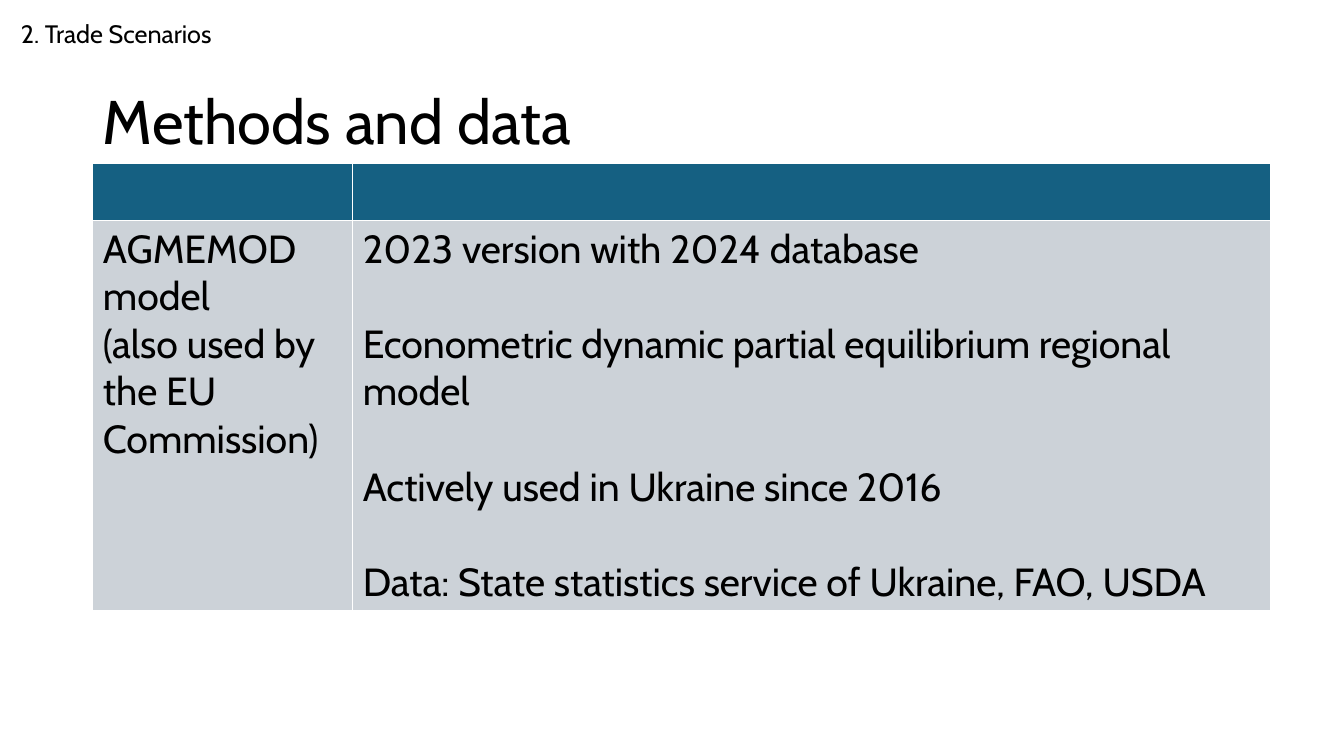
from dataclasses import dataclass

from lxml.etree import SubElement
from pptx import Presentation
from pptx.dml.color import RGBColor
from pptx.enum.text import MSO_ANCHOR
from pptx.oxml.ns import qn
from pptx.slide import Slide
from pptx.table import _Cell
from pptx.text.text import TextFrame
from pptx.util import Cm, Pt

FONT = "Cabin"
HEX = {"text": "000000", "head": "156082", "body": "CCD2D8", "line": "FFFFFF"}


@dataclass
class Label:
    text: str
    box: tuple[float, float, float, float]
    size: int
    anchor: MSO_ANCHOR = MSO_ANCHOR.TOP
    pitch: float = 1.0


@dataclass
class Entry:
    lines: list[str]
    gap: int = 0


LABELS = [
    Label("Methods and data", (2.34, 2.64, 29.18, 1.47), 44, MSO_ANCHOR.BOTTOM, 0.9),
    Label("2. Trade Scenarios", (0.28, 0.33, 16.92, 1.02), 18),
]
ENTRIES = [
    Entry(["AGMEMOD model", "(also used by the EU Commission)"]),
    Entry([
        "2023 version with 2024 database",
        "Econometric dynamic partial equilibrium regional model",
        "Actively used in Ukraine since 2016",
        "Data: State statistics service of Ukraine, FAO, USDA",
    ], gap=34),
]
WIDTHS = (6.55, 23.14)
HEIGHTS = (1.42, 9.83)


def write(frame: TextFrame, lines: list[str], size: int, gap: int = 0, pitch: float = 1.0) -> None:
    """Put one paragraph per line, with a gap between paragraphs."""
    for i, line in enumerate(lines):
        para = frame.add_paragraph() if i else frame.paragraphs[0]
        para.line_spacing = pitch
        para.space_before = Pt(gap if i else 0)
        run = para.add_run()
        run.text = line
        style = {"name": FONT, "size": Pt(size), "bold": False}
        for key, value in style.items():
            setattr(run.font, key, value)
        run.font.color.rgb = RGBColor.from_string(HEX["text"])


def draw_label(slide: Slide, label: Label) -> None:
    frame = slide.shapes.add_textbox(*map(Cm, label.box)).text_frame
    for key, value in {"word_wrap": True, "vertical_anchor": label.anchor}.items():
        setattr(frame, key, value)
    write(frame, [label.text], label.size, pitch=label.pitch)


def paint(cell: _Cell, color: str) -> None:
    """Give a cell thin white borders and a solid fill."""
    props = cell._tc.get_or_add_tcPr()
    for side in "LRTB":
        line = SubElement(props, qn(f"a:ln{side}"), w=str(Pt(1)))
        fill = SubElement(line, qn("a:solidFill"))
        SubElement(fill, qn("a:srgbClr"), val=HEX["line"])
    cell.fill.solid()
    cell.fill.fore_color.rgb = RGBColor.from_string(HEX[color])


def draw_table(slide: Slide) -> None:
    size = Cm(sum(WIDTHS)), Cm(sum(HEIGHTS))
    table = slide.shapes.add_table(len(HEIGHTS), len(WIDTHS), Cm(2.34), Cm(4.13), *size).table
    for row, height in zip(table.rows, HEIGHTS):
        row.height = Cm(height)
    for i, (width, entry) in enumerate(zip(WIDTHS, ENTRIES)):
        table.columns[i].width = Cm(width)
        paint(table.cell(0, i), "head")
        cell = table.cell(1, i)
        paint(cell, "body")
        write(cell.text_frame, entry.lines, 28, entry.gap)


def main() -> None:
    deck = Presentation()
    deck.slide_width, deck.slide_height = Cm(33.87), Cm(19.05)
    slide = deck.slides.add_slide(deck.slide_layouts[6])

    # Title and section name
    for label in LABELS:
        draw_label(slide, label)

    # Model overview
    draw_table(slide)

    deck.save("out.pptx")


if __name__ == "__main__":
    main()
